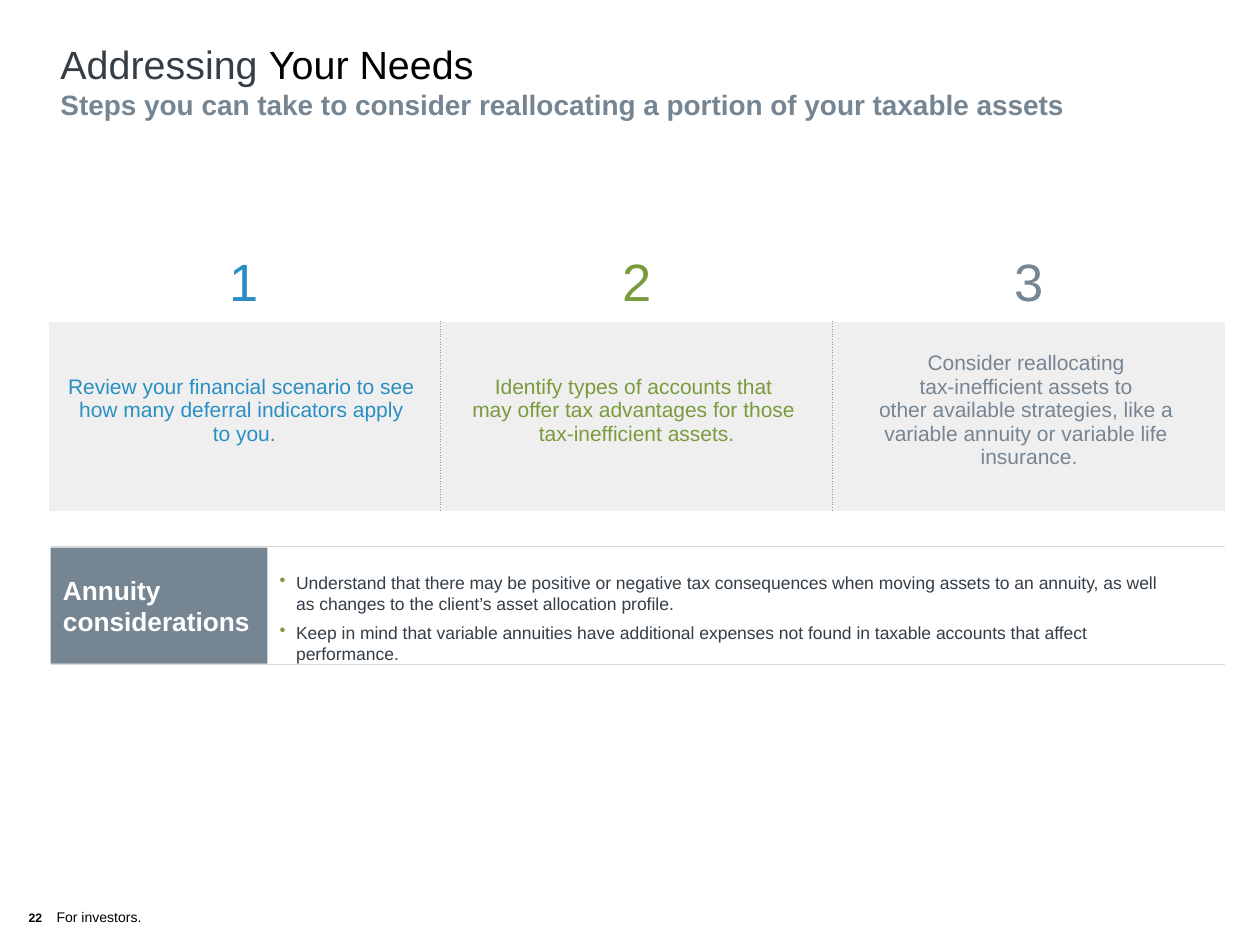
import pptx
import pptx.util
import pptx.dml.color
import pptx.enum.shapes
import pptx.enum.text
import pptx.oxml.ns
import lxml.etree

Cm = pptx.util.Cm
Pt = pptx.util.Pt
Align = pptx.enum.text.PP_ALIGN
Anchor = pptx.enum.text.MSO_ANCHOR
INK, SLATE, PALE = "333E47", "768592", "EFEFEF"
STEPS = [
    ("298FC2", "Review your financial scenario to see \v"
     "how many deferral indicators apply \vto you."),
    ("799B3C", "Identify types of accounts that \v"
     "may offer tax advantages for those \vtax-inefficient assets."),
    (SLATE, "Consider reallocating \vtax-inefficient assets to \v"
     "other available strategies, like a \v"
     "variable annuity or variable life \vinsurance."),
]
NOTES = [
    "Understand that there may be positive or negative tax consequences when "
    "moving assets to an annuity, as well as changes to the client’s asset "
    "allocation profile.",
    "Keep in mind that variable annuities have additional expenses not found "
    "in taxable accounts that affect performance.",
]


def color(code):
    """Turn a hex string into a colour."""
    return pptx.dml.color.RGBColor.from_string(code)


def node(root, tag, **attrs):
    """Append a drawing element with attributes."""
    item = lxml.etree.SubElement(root, pptx.oxml.ns.qn("a:" + tag))
    for key, val in attrs.items():
        item.set(key, str(val))
    return item


def style(font, size, code, bold=False):
    """Format a font."""
    font.name = "Arial"
    font.size = Pt(size)
    font.bold = bold
    font.color.rgb = color(code)


def add_runs(para, *runs):
    """Add runs given as text, size, colour and weight."""
    for text, *look in runs:
        run = para.add_run()
        run.text = text
        style(run.font, *look)


def add_box(slide, left, top, width, height):
    """Add a wrapping text box without margins and return its frame."""
    box = slide.shapes.add_textbox(Cm(left), Cm(top), Cm(width), Cm(height))
    frame = box.text_frame
    frame.word_wrap = True
    frame.margin_left = frame.margin_right = 0
    frame.margin_top = frame.margin_bottom = 0
    return frame


def fill_cell(cell, text, size, code):
    """Write centred text into a cell without margins."""
    cell.margin_left = cell.margin_right = 0
    cell.margin_top = cell.margin_bottom = 0
    cell.text_frame.text = text
    para = cell.text_frame.paragraphs[0]
    para.alignment = Align.CENTER
    for run in para.runs:
        style(run.font, size, code)


def dot_edge(cell, side):
    """Draw a dotted border on one side of a cell."""
    line = node(cell._tc.get_or_add_tcPr(), side, w=Pt(0.75))
    node(node(line, "solidFill"), "srgbClr", val="999999")
    node(line, "prstDash", val="sysDot")


def add_steps(slide):
    """Add the table of numbered steps."""
    table = slide.shapes.add_table(
        2, len(STEPS), Cm(0.97), Cm(5.13), Cm(23.73), Cm(5.18)).table
    table.first_row = table.horz_banding = False
    table.rows[0].height, table.rows[1].height = Cm(1.35), Cm(3.83)
    for col, (code, text) in enumerate(STEPS):
        table.columns[col].width = Cm(7.91)
        head, body = table.cell(0, col), table.cell(1, col)
        fill_cell(head, str(col + 1), 30, code)
        head.fill.background()
        fill_cell(body, text, 12, code)
        body.vertical_anchor = Anchor.MIDDLE
        body.margin_bottom = Cm(0.25)
        if col > 0:
            dot_edge(body, "lnL")
        if col < len(STEPS) - 1:
            dot_edge(body, "lnR")
        body.fill.solid()
        body.fill.fore_color.rgb = color(PALE)


def add_label(slide, text):
    """Add the filled label beside the notes."""
    shape = slide.shapes.add_shape(
        pptx.enum.shapes.MSO_SHAPE.RECTANGLE,
        Cm(1.02), Cm(11.04), Cm(4.37), Cm(2.34))
    shape.shadow.inherit = False
    shape.fill.solid()
    shape.fill.fore_color.rgb = color(SLATE)
    shape.line.fill.background()
    frame = shape.text_frame
    frame.text = text
    frame.word_wrap = True
    frame.vertical_anchor = Anchor.MIDDLE
    frame.margin_left, frame.margin_right = Cm(0.25), 0
    frame.margin_top = frame.margin_bottom = 0
    para = frame.paragraphs[0]
    para.alignment = Align.LEFT
    style(para.runs[0].font, 15, "FFFFFF", True)


def add_notes(slide):
    """Add the bulleted notes."""
    frame = add_box(slide, 5.61, 11.53, 18.47, 1.5)
    frame.margin_right = Cm(0.33)
    for pos, text in enumerate(NOTES):
        para = frame.add_paragraph() if pos else frame.paragraphs[0]
        para.text = text
        props = para._p.get_or_add_pPr()
        props.set("marL", str(Cm(0.36)))
        props.set("indent", str(Cm(-0.33)))
        if pos:
            para.space_before = Pt(4.5)
        node(node(props, "buClr"), "srgbClr", val="799B3C")
        node(props, "buChar", char="•")
        style(para.runs[0].font, 10, INK)


def add_rule(slide, top):
    """Add a thin horizontal line."""
    line = slide.shapes.add_connector(
        pptx.enum.shapes.MSO_CONNECTOR.STRAIGHT,
        Cm(1.02), Cm(top), Cm(24.69), Cm(top))
    line.line.color.rgb = color("D9D9D9")
    line.line.width = Pt(0.75)
    node(line._element.spPr, "effectLst")


def add_title(slide):
    """Add the title and its subtitle."""
    frame = add_box(slide, 1.22, 0.81, 22.56, 1.7)
    add_runs(frame.paragraphs[0], ("Addressing ", 22.5, INK),
             ("Your Needs", 22.5, "000000"))
    add_runs(frame.add_paragraph(),
             ("Steps you can take to consider reallocating a portion of "
              "your taxable assets", 16, SLATE, True))


def add_foot(slide):
    """Add the page number and audience line."""
    para = add_box(slide, 0.58, 18.31, 12.2, 0.4).paragraphs[0]
    tabs = node(para._p.get_or_add_pPr(), "tabLst")
    node(tabs, "tab", pos=Cm(0.56), algn="l")
    add_runs(para, ("22\t", 7, "000000", True),
             ("For investors.", 8, "000000"))


def main():
    """Build and save the slide."""
    deck = pptx.Presentation()
    deck.slide_width, deck.slide_height = Cm(25.4), Cm(19.05)
    slide = deck.slides.add_slide(deck.slide_layouts[6])
    add_title(slide)
    add_steps(slide)
    add_notes(slide)
    add_label(slide, "Annuity considerations")
    for top in (11.02, 13.39):
        add_rule(slide, top)
    add_foot(slide)
    deck.save("out.pptx")


if __name__ == "__main__":
    main()
